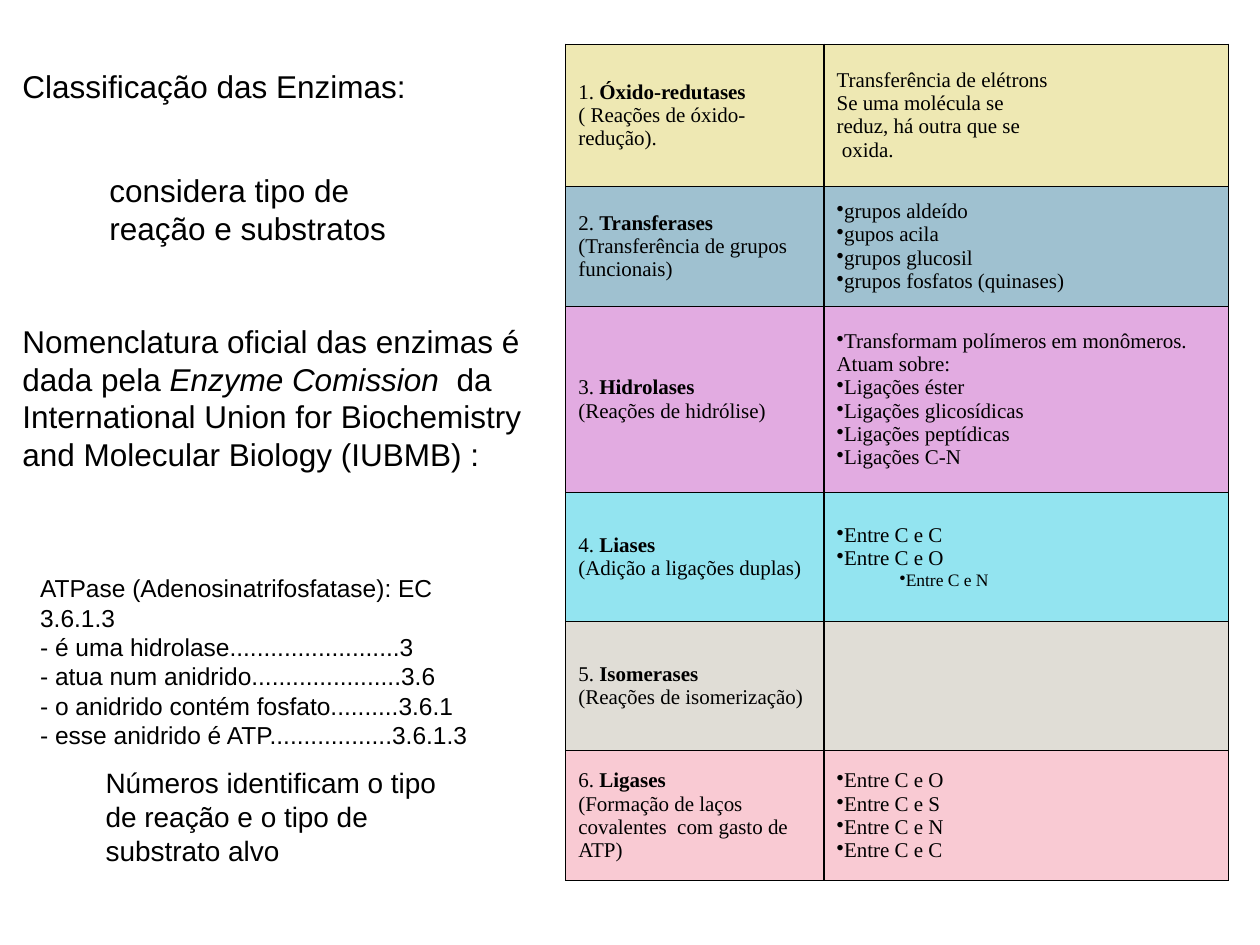
from lxml.etree import SubElement
from pptx import Presentation
from pptx.dml.color import RGBColor
from pptx.enum.text import MSO_ANCHOR
from pptx.oxml import parse_xml
from pptx.oxml.ns import nsdecls, qn
from pptx.util import Inches, Pt

BLACK = RGBColor(0x00, 0x00, 0x00)
YELLOW = RGBColor(0xEE, 0xE8, 0xB3)
BLUE = RGBColor(0x9F, 0xC1, 0xD0)
PURPLE = RGBColor(0xE2, 0xAB, 0xE1)
CYAN = RGBColor(0x93, 0xE4, 0xF0)
GREY = RGBColor(0xE0, 0xDD, 0xD6)
PINK = RGBColor(0xF9, 0xCA, 0xD3)

BULLET = "•"
COLUMN_WIDTHS = (2.05, 3.21)

# Row height, fill, class name, reaction, lines of the right cell
ENZYME_CLASSES = [
    (1.13, YELLOW, "Óxido-redutases", "( Reações de óxido-redução).",
     ["Transferência de elétrons", "Se uma molécula se",
      "reduz, há outra que se", " oxida."]),
    (0.95, BLUE, "Transferases", "(Transferência de grupos funcionais)",
     ["•grupos aldeído", "•gupos acila", "•grupos glucosil",
      "•grupos fosfatos (quinases)"]),
    (1.48, PURPLE, "Hidrolases", "(Reações de hidrólise)",
     ["•Transformam polímeros em monômeros.\nAtuam sobre:", "•Ligações éster",
      "•Ligações glicosídicas", "•Ligações peptídicas", "•Ligações C-N"]),
    (1.02, CYAN, "Liases", "(Adição a ligações duplas)",
     ["•Entre C e C", "•Entre C e O", "\t•Entre C e N"]),
    (1.03, GREY, "Isomerases", "(Reações de isomerização)", []),
    (1.03, PINK, "Ligases", "(Formação de laços covalentes  com gasto de ATP)",
     ["•Entre C e O", "•Entre C e S", "•Entre C e N", "•Entre C e C"]),
]


def write(para, text, size=12, font="Times New Roman", bold=False, italic=False):
    """Append formatted text to a paragraph; a newline becomes a line break."""
    for number, line in enumerate(text.split("\n")):
        if number:
            para.add_line_break()
        if not line:
            continue
        span = para.add_run()
        span.text = line
        span.font.size = Pt(size)
        span.font.name = font
        span.font.bold = bold
        span.font.italic = italic
        span.font.color.rgb = BLACK


def next_para(frame, first):
    return frame.paragraphs[0] if first else frame.add_paragraph()


def set_margin(para, left):
    props = para._p.get_or_add_pPr()
    props.set("marL", str(Inches(left)))
    props.set("indent", "0")
    return props


def style_cell(cell, color):
    cell.fill.solid()
    cell.fill.fore_color.rgb = color
    cell.vertical_anchor = MSO_ANCHOR.MIDDLE
    props = cell._tc.get_or_add_tcPr()
    for position, side in enumerate("LRTB"):
        props.insert(position, parse_xml(
            f'<a:ln{side} {nsdecls("a")} w="{Pt(0.75)}"><a:solidFill>'
            f'<a:srgbClr val="{BLACK}"/></a:solidFill></a:ln{side}>'))


def fill_examples(frame, lines):
    """Write the right cell: a leading tab marks a second-level line."""
    for number, line in enumerate(lines):
        para = next_para(frame, number == 0)
        nested = line.startswith("\t")
        text = line.lstrip("\t")
        if text.startswith(BULLET):
            para.level = int(nested)
            props = set_margin(para, 0.5 if nested else 0)
            SubElement(props, qn("a:buChar")).set("char", BULLET)
        write(para, text.removeprefix(BULLET), size=10 if nested else 12)


def add_class_table(page, left, top):
    heights = [entry[0] for entry in ENZYME_CLASSES]
    table = page.shapes.add_table(
        len(heights), len(COLUMN_WIDTHS), Inches(left), Inches(top),
        Inches(sum(COLUMN_WIDTHS)), Inches(sum(heights))).table
    for column, width in zip(table.columns, COLUMN_WIDTHS):
        column.width = Inches(width)
    for index, (height, color, name, reaction, lines) in enumerate(ENZYME_CLASSES):
        table.rows[index].height = Inches(height)
        name_cell, example_cell = table.cell(index, 0), table.cell(index, 1)
        for cell in (name_cell, example_cell):
            style_cell(cell, color)
        para = name_cell.text_frame.paragraphs[0]
        write(para, f"{index + 1}. ")
        write(para, f"{name}\n", bold=True)
        write(para, reaction)
        fill_examples(example_cell.text_frame, lines)


def add_frame(page, left, top, width, height):
    box = page.shapes.add_textbox(
        Inches(left), Inches(top), Inches(width), Inches(height))
    box.text_frame.word_wrap = True
    return box.text_frame


def add_note(page, left, top, width, height, text, size):
    frame = add_frame(page, left, top, width, height)
    write(frame.paragraphs[0], text, size=size, font="Arial")


def add_introduction(page, left, top, width, height):
    frame = add_frame(page, left, top, width, height)
    # Text, left margin in inches, space before in points
    paragraphs = [
        ("Classificação das Enzimas:", 0, 0),
        ("considera tipo de", 0.69, 38),
        ("reação e substratos", 0.69, 0),
        ("Nomenclatura oficial das enzimas é dada pela ", 0, 43),
    ]
    for number, (text, margin, space) in enumerate(paragraphs):
        para = next_para(frame, number == 0)
        set_margin(para, margin)
        para.space_before = Pt(space)
        write(para, text, size=18, font="Arial")
    write(para, "Enzyme Comission", size=18, font="Arial", italic=True)
    write(para, "  da International Union for Biochemistry and Molecular "
          "Biology (IUBMB) :", size=18, font="Arial")


def main():
    deck = Presentation()
    deck.slide_width, deck.slide_height = Inches(10), Inches(7.5)
    page = deck.slides.add_slide(deck.slide_layouts[6])
    add_class_table(page, 4.49, 0.35)
    add_introduction(page, 0.08, 0.48, 4.56, 4.24)
    add_note(page, 0.22, 4.5, 3.96, 1.26,
             "ATPase (Adenosinatrifosfatase): EC 3.6.1.3\n"
             "- é uma hidrolase.........................3\n"
             "- atua num anidrido......................3.6\n"
             "- o anidrido contém fosfato..........3.6.1\n"
             "- esse anidrido é ATP..................3.6.1.3", size=14)
    add_note(page, 0.74, 6.03, 3.06, 0.9,
             "Números identificam o tipo de reação e o tipo de substrato alvo",
             size=16)
    deck.save("out.pptx")


if __name__ == "__main__":
    main()
